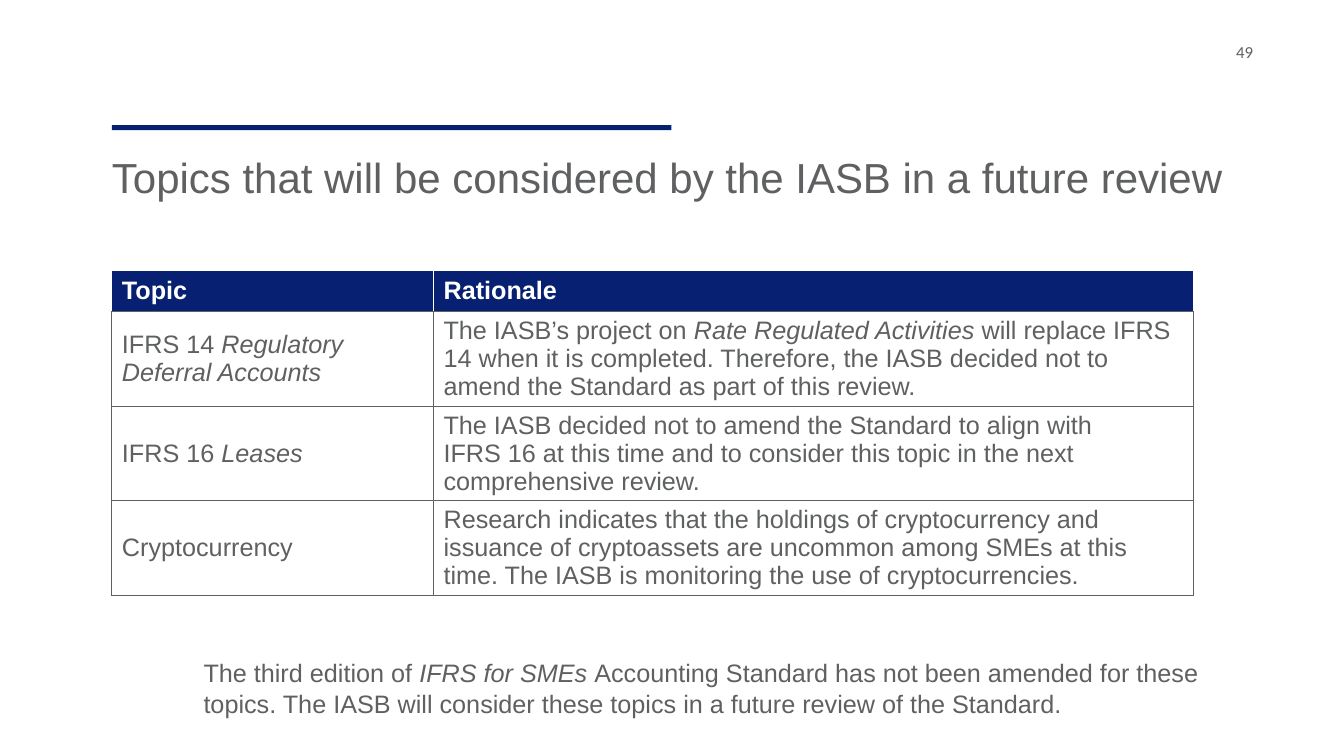
from pptx import Presentation
from pptx.dml.color import RGBColor
from pptx.enum.shapes import MSO_SHAPE
from pptx.enum.text import MSO_ANCHOR, MSO_AUTO_SIZE, PP_ALIGN
from pptx.oxml import parse_xml
from pptx.oxml.ns import nsdecls
from pptx.util import Inches, Pt

NAVY, GREY, WHITE = "072171", "5F6061", "FFFFFF"
LEFT = Inches(1.11)


def write(p, text, size, color=GREY, bold=False, font="Arial"):
    """Fill a paragraph; parts between asterisks are italic, a newline is a line break."""
    p.alignment = PP_ALIGN.LEFT
    for i, part in enumerate(text.split("*")):
        for j, line in enumerate(part.split("\n")):
            if j:
                p.add_line_break()
            if line:
                r = p.add_run()
                r.text = line
                r.font.name, r.font.size = font, Pt(size)
                r.font.bold, r.font.italic = bold, i % 2 == 1
                r.font.color.rgb = RGBColor.from_string(color)


def set_frame(tf, anchor, inset_x=0, inset_y=0):
    tf.word_wrap = True
    tf.auto_size = MSO_AUTO_SIZE.NONE
    tf.vertical_anchor = anchor
    tf.margin_left = tf.margin_right = Inches(inset_x)
    tf.margin_top = tf.margin_bottom = Inches(inset_y)


prs = Presentation()
prs.slide_width, prs.slide_height = Inches(13.33), Inches(7.5)
s = prs.slides.add_slide(prs.slide_layouts[5])

# Rule and title
bar = s.shapes.add_shape(MSO_SHAPE.RECTANGLE, LEFT, Inches(1.24), Inches(5.55), Inches(0.05))
bar.shadow.inherit = False
bar.fill.solid()
bar.fill.fore_color.rgb = RGBColor.from_string(NAVY)
bar.line.fill.background()

title = s.shapes.title
title.left, title.top = LEFT, Inches(1.5)
title.width, title.height = Inches(11.14), Inches(0.7)
set_frame(title.text_frame, MSO_ANCHOR.TOP)
write(title.text_frame.paragraphs[0],
      "Topics that will be considered by the IASB in a future review", 30)

# Slide number
number = s.shapes.add_textbox(Inches(12.26), Inches(0.41), Inches(0.67), Inches(0.29))
set_frame(number.text_frame, MSO_ANCHOR.TOP)
write(number.text_frame.paragraphs[0], "49", 12, font="Calibri")

# Table of topics
rows = [
    ("Topic", "Rationale"),
    ("IFRS 14 *Regulatory Deferral Accounts*",
     "The IASB’s project on *Rate Regulated Activities *will replace IFRS 14 when it is "
     "completed. Therefore, the IASB decided not to amend the Standard as part of this review."),
    ("IFRS 16 *Leases*",
     "The IASB decided not to amend the Standard to align with \nIFRS 16 at this time and to "
     "consider this topic in the next comprehensive review."),
    ("Cryptocurrency",
     "Research indicates that the holdings of cryptocurrency and issuance of cryptoassets are "
     "uncommon among SMEs at this time. The IASB is monitoring the use of cryptocurrencies."),
]
col_widths = (3.19, 7.54)
row_heights = (0.41, 0.94, 0.94, 0.94)
table = s.shapes.add_table(len(rows), len(col_widths), LEFT, Inches(2.68),
                           Inches(sum(col_widths)), Inches(sum(row_heights))).table
for col, width in zip(table.columns, col_widths):
    col.width = Inches(width)
for row, height in zip(table.rows, row_heights):
    row.height = Inches(height)

for i, row in enumerate(rows):
    header = i == 0
    for j, text in enumerate(row):
        cell = table.cell(i, j)
        cell.vertical_anchor = MSO_ANCHOR.MIDDLE
        p = cell.text_frame.paragraphs[0]
        p.line_spacing = Pt(20)
        write(p, text, 18, WHITE if header else GREY, bold=header)
        for side in "LRTB":
            color = WHITE if header and side != "B" else GREY
            cell._tc.get_or_add_tcPr().append(parse_xml(
                f'<a:ln{side} {nsdecls("a")} w="12700"><a:solidFill>'
                f'<a:srgbClr val="{color}"/></a:solidFill></a:ln{side}>'))
        cell.fill.solid()
        cell.fill.fore_color.rgb = RGBColor.from_string("072071" if header else WHITE)

# Closing note
note = s.shapes.add_shape(MSO_SHAPE.RECTANGLE, Inches(1.92), Inches(6.56),
                          Inches(10.79), Inches(0.53))
note.shadow.inherit = False
note.fill.solid()
note.fill.fore_color.rgb = RGBColor.from_string(WHITE)
note.line.fill.background()
set_frame(note.text_frame, MSO_ANCHOR.MIDDLE, 0.1, 0.05)
write(note.text_frame.paragraphs[0],
      "The third edition of *IFRS for SMEs *Accounting Standard has not been amended for these "
      "topics. The IASB will consider these topics in a future review of the Standard.", 18)

prs.save("out.pptx")
